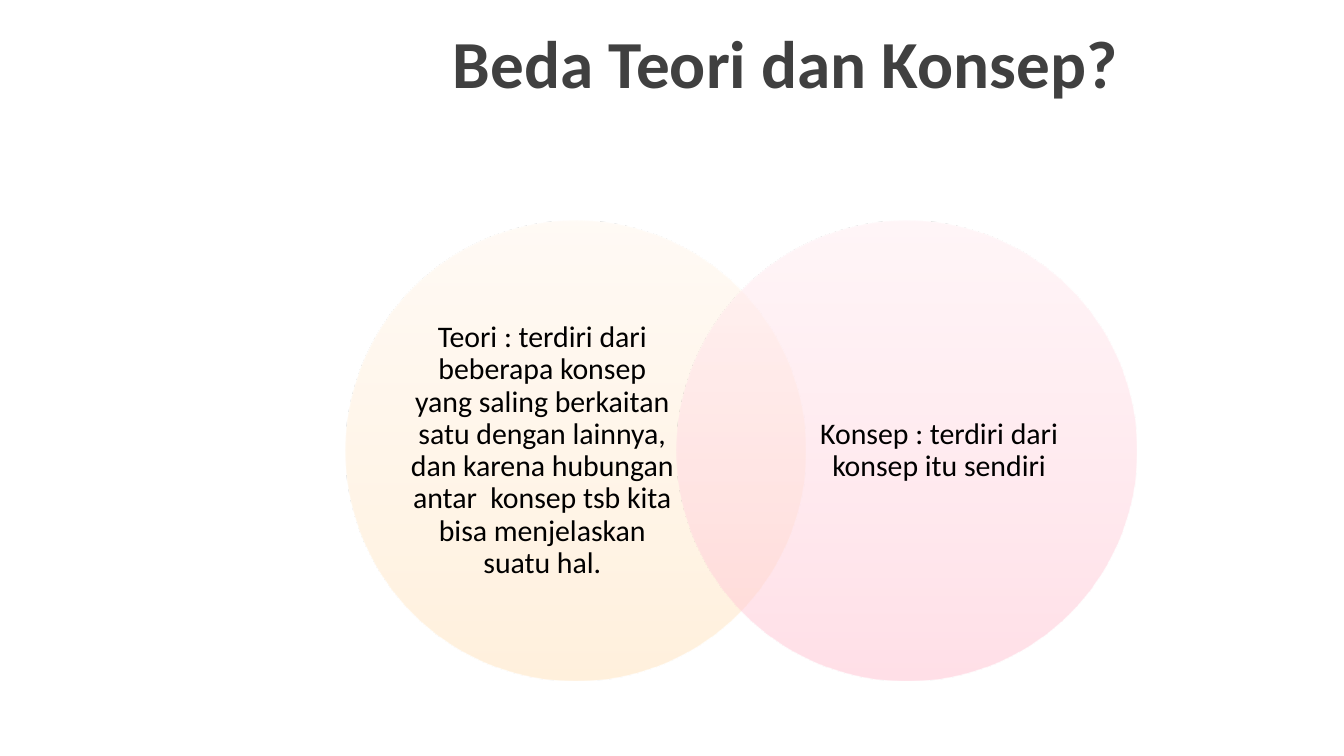
from lxml import etree
from pptx import Presentation
from pptx import util as u
from pptx.dml.color import RGBColor
from pptx.enum import dml, shapes, text
from pptx.oxml.ns import qn

# Content
TITLE = "Beda Teori dan Konsep?"
CIRCLES = [
    ("Teori : terdiri dari beberapa konsep yang saling berkaitan satu dengan "
     "lainnya, dan karena hubungan antar  konsep tsb kita bisa menjelaskan "
     "suatu hal.", ["FFE3BB", "FFEBCF", "FFF7ED"]),
    ("Konsep : terdiri dari konsep itu sendiri", ["FFC1D1", "FFD3DE", "FFEEF2"]),
]

THEME = {
    "font": "Calibri",
    "background": "FFFFFF",
    "title": "404040",
    "body": "000000",
    "title_size": 36,
    "body_size": 16,
    "gradient_stops": [0, 35, 100],
    "opacity": 50,
}

# Layout in centimetres
DIAMETER, LEFT, TOP, STEP = 8.69, 6.53, 4.17, 6.25
TEXT_WIDTH, TEXT_HEIGHT, TEXT_INSET = 5.0, 6.63, 1.22


def style_paragraph(paragraph, size, color, bold=False):
    paragraph.alignment = text.PP_ALIGN.CENTER
    font = paragraph.font
    font.name, font.size, font.bold = THEME["font"], u.Pt(size), bold
    font.color.rgb = RGBColor.from_string(color)


def fill_gradient(shape, colors):
    """Upward gradient with translucent stops."""
    shape.fill.gradient()
    shape.fill.gradient_angle = 90
    stops = shape._element.spPr.find(".//" + qn("a:gsLst"))
    for stop in list(stops):
        stops.remove(stop)
    for position, color in zip(THEME["gradient_stops"], colors):
        stop = etree.SubElement(stops, qn("a:gs"), pos=str(position * 1000))
        fill_color = etree.SubElement(stop, qn("a:srgbClr"), val=color)
        etree.SubElement(fill_color, qn("a:alpha"), val=str(THEME["opacity"] * 1000))


def add_circle(slide, left, colors):
    circle = slide.shapes.add_shape(
        shapes.MSO_SHAPE.OVAL, u.Cm(left), u.Cm(TOP), u.Cm(DIAMETER), u.Cm(DIAMETER))
    circle.shadow.inherit = False
    circle.line.fill.background()
    fill_gradient(circle, colors)


def add_label(slide, left, label):
    top = TOP + (DIAMETER - TEXT_HEIGHT) / 2
    box = slide.shapes.add_textbox(
        u.Cm(left), u.Cm(top), u.Cm(TEXT_WIDTH), u.Cm(TEXT_HEIGHT))
    frame = box.text_frame
    frame.word_wrap = True
    frame.vertical_anchor = text.MSO_ANCHOR.MIDDLE
    frame.margin_left = frame.margin_right = frame.margin_top = frame.margin_bottom = 0
    paragraph = frame.paragraphs[0]
    paragraph.text = label
    paragraph.line_spacing = 0.9
    style_paragraph(paragraph, THEME["body_size"], THEME["body"])


def main():
    presentation = Presentation()
    presentation.slide_width, presentation.slide_height = u.Cm(25.4), u.Cm(14.28)
    slide = presentation.slides.add_slide(presentation.slide_layouts[5])
    slide.background.fill.solid()
    slide.background.fill.fore_color.rgb = RGBColor.from_string(THEME["background"])

    # Title
    title = slide.shapes.title
    title.left, title.top = u.Cm(4.29), u.Cm(0.08)
    title.width, title.height = u.Cm(21.11), u.Cm(2.16)
    title.text_frame.text = TITLE
    title.text_frame.vertical_anchor = text.MSO_ANCHOR.MIDDLE
    style_paragraph(title.text_frame.paragraphs[0], THEME["title_size"],
                    THEME["title"], bold=True)

    # Overlapping circles, each label set toward the outer side
    insets = [TEXT_INSET, DIAMETER - TEXT_WIDTH - TEXT_INSET]
    for index, ((label, colors), inset) in enumerate(zip(CIRCLES, insets)):
        left = LEFT + index * STEP
        add_circle(slide, left, colors)
        add_label(slide, left + inset, label)

    presentation.save("out.pptx")


if __name__ == "__main__":
    main()
